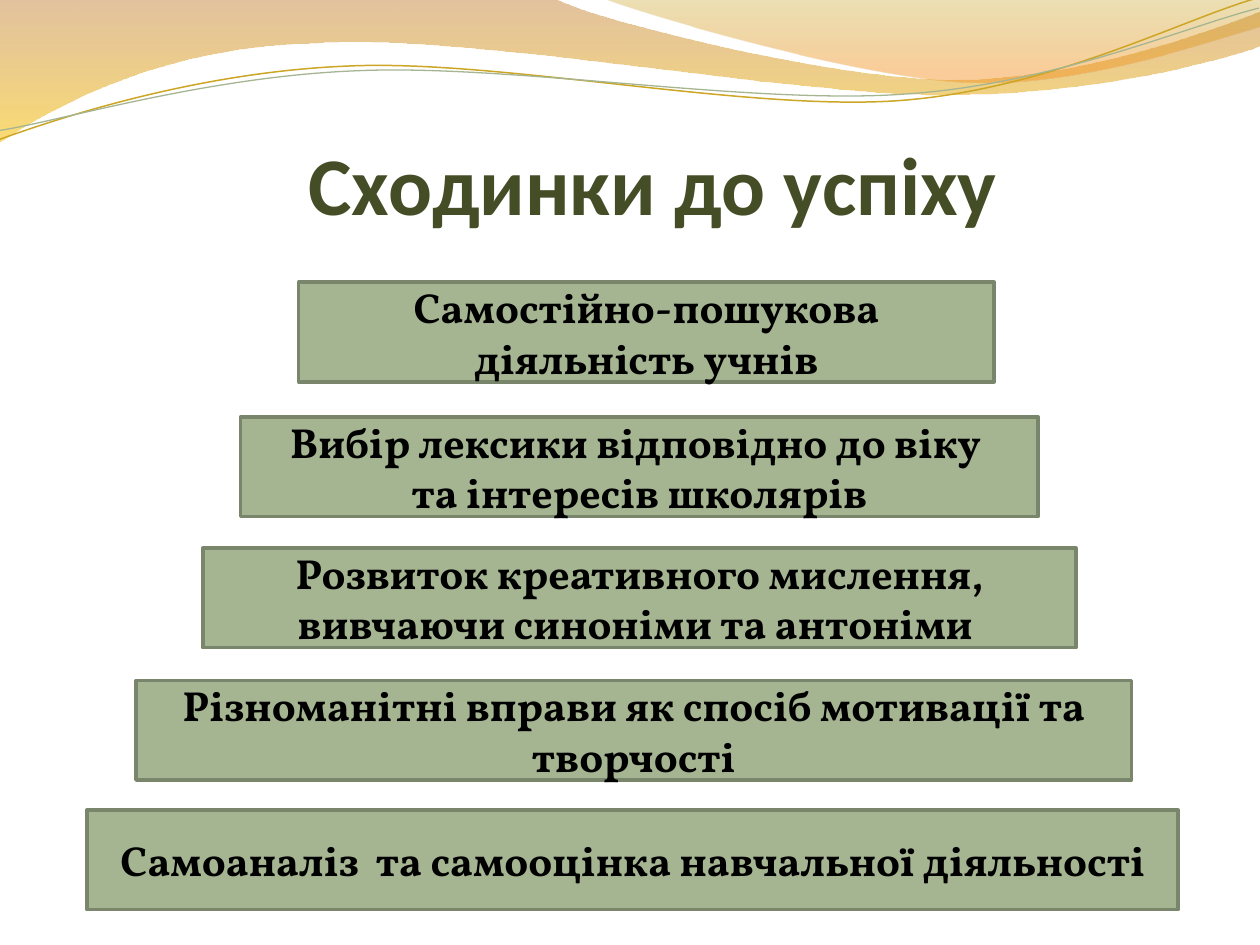
from pptx import Presentation
from pptx.dml.color import RGBColor
from pptx.enum.shapes import MSO_SHAPE
from pptx.enum.text import MSO_ANCHOR, PP_ALIGN
from pptx.oxml.ns import qn
from pptx.util import Inches, Pt
from lxml import etree

RECTANGLE = MSO_SHAPE.ROUNDED_RECTANGLE
MIDDLE, BOTTOM = MSO_ANCHOR.MIDDLE, MSO_ANCHOR.BOTTOM
CENTER = PP_ALIGN.CENTER

COLORS = {
    "brown": "C07A28", "yellow": "F7BF00", "olive": "C09709", "orange": "F59320",
    "gold": "CCA624", "sage": "A5B592", "border": "7A866C",
    "title": "444D26", "text": "000000",
}


def draw_outline(page, start, segments, closed):
    """Draw straight segments (one point) and cubic curves (three points)."""
    points = [(Inches(x), Inches(y)) for segment in segments for x, y in segment]
    builder = page.shapes.build_freeform(Inches(start[0]), Inches(start[1]))
    builder.add_line_segments(points, close=closed)
    shape = builder.convert_to_shape()
    shape.shadow.inherit = False
    # Merge each triple of line steps into one cubic curve
    steps = iter(list(shape._element.iter(qn("a:lnTo"))))
    for segment in segments:
        parts = [next(steps) for point in segment]
        if len(parts) == 3:
            curve = etree.Element(qn("a:cubicBezTo"))
            parts[0].addprevious(curve)
            for part in parts:
                curve.append(part[0])
                part.getparent().remove(part)
    return shape


def format_text(frame, size, font_name, color):
    for para in frame.paragraphs:
        para.alignment = CENTER
        for span in para.runs:
            span.font.size = Pt(size)
            span.font.name = font_name
            span.font.bold = True
            span.font.color.rgb = RGBColor.from_string(COLORS[color])


deck = Presentation()
deck.slide_width, deck.slide_height = Inches(10), Inches(7.5)
page = deck.slides.add_slide(deck.slide_layouts[6])

# Translucent gradient waves: start, segments, stops (position, colour, opacity)
waves = [
    ((0, 0),
     [[(4.4, -0.01)],
      [(4.76, 0.17), (6.64, 0.63), (7.58, 0.63)],
      [(8.53, 0.63), (9.58, 0.26), (10, 0.09)],
      [(10.01, 0.36)],
      [(9.83, 0.44), (8.7, 0.76), (7.46, 0.75)],
      [(6.22, 0.75), (3.82, 0.28), (2.57, 0.34)],
      [(1.29, 0.36), (0.46, 0.83), (-0.01, 1.13)],
      [(0, 0)]],
     [(0, "brown", 45), (1, "yellow", 55)]),
    ((4.79, -0.01),
     [[(5.09, 0.11), (6.82, 0.62), (7.69, 0.65)],
      [(8.56, 0.69), (9.61, 0.32), (10, 0.21)],
      [(10, 0)],
      [(4.79, -0.01)]],
     [(0, "olive", 30), (0.8, "orange", 45)]),
]
for start, segments, stops in waves:
    wave = draw_outline(page, start, segments, True)
    wave.line.fill.background()
    wave.fill.gradient()
    wave.fill.gradient_angle = 270
    for stop, (position, color, opacity) in zip(wave.fill.gradient_stops, stops):
        stop.position = position
        stop.color.rgb = RGBColor.from_string(COLORS[color])
    for element, (position, color, opacity) in zip(wave._element.iter(qn("a:srgbClr")), stops):
        etree.SubElement(element, qn("a:alpha")).set("val", str(opacity * 1000))

# Thin wavy lines, tilted slightly
strands = [
    ((-0.02, 0.87),
     [[(0.47, 0.72), (1.58, 0.41), (2.77, 0.42)],
      [(3.96, 0.42), (5.91, 0.93), (7.12, 0.9)],
      [(8.32, 0.87), (9.4, 0.36), (10, 0.22)]], "gold", 0.85),
    ((-0.02, 0.8),
     [[(0.46, 0.75), (1.64, 0.45), (2.83, 0.46)],
      [(4.03, 0.46), (5.96, 0.88), (7.16, 0.85)],
      [(8.35, 0.83), (9.42, 0.42), (10.01, 0.3)]], "sage", 0.75),
]
for start, segments, color, width in strands:
    strand = draw_outline(page, start, segments, False)
    strand.rotation = 357.3
    strand.fill.background()
    strand.line.color.rgb = RGBColor.from_string(COLORS[color])
    strand.line.width = Pt(width)

# Title
title = page.shapes.add_textbox(Inches(0.68), Inches(0.97), Inches(9), Inches(0.87))
frame = title.text_frame
frame.word_wrap = True
frame.vertical_anchor = BOTTOM
frame.margin_left = frame.margin_right = frame.margin_bottom = 0
frame.margin_top = Inches(0.05)
frame.text = "Сходинки до успіху"
format_text(frame, 46.8, "Calibri", "title")

# Steps from the bottom up: left, top, width, text
steps = [
    (0.69, 6.43, 8.66, "Самоаналіз  та самооцінка навчальної діяльності"),
    (1.08, 5.4, 7.9, "Різноманітні вправи як спосіб мотивації та творчості"),
    (1.61, 4.35, 6.93, "Розвиток креативного мислення, вивчаючи синоніми та антоніми "),
    (1.91, 3.31, 6.33, "Вибір лексики відповідно до віку \nта інтересів школярів"),
    (2.37, 2.24, 5.52, "Самостійно-пошукова діяльність учнів"),
]
for left, top, width, text in steps:
    box = page.shapes.add_shape(RECTANGLE, Inches(left), Inches(top), Inches(width), Inches(0.79))
    box.adjustments[0] = 0
    box.shadow.inherit = False
    box.fill.solid()
    box.fill.fore_color.rgb = RGBColor.from_string(COLORS["sage"])
    box.line.color.rgb = RGBColor.from_string(COLORS["border"])
    box.line.width = Pt(2)
    frame = box.text_frame
    frame.word_wrap = True
    frame.vertical_anchor = MIDDLE
    frame.text = text
    format_text(frame, 24, "Vollkorn", "text")

deck.save("out.pptx")
